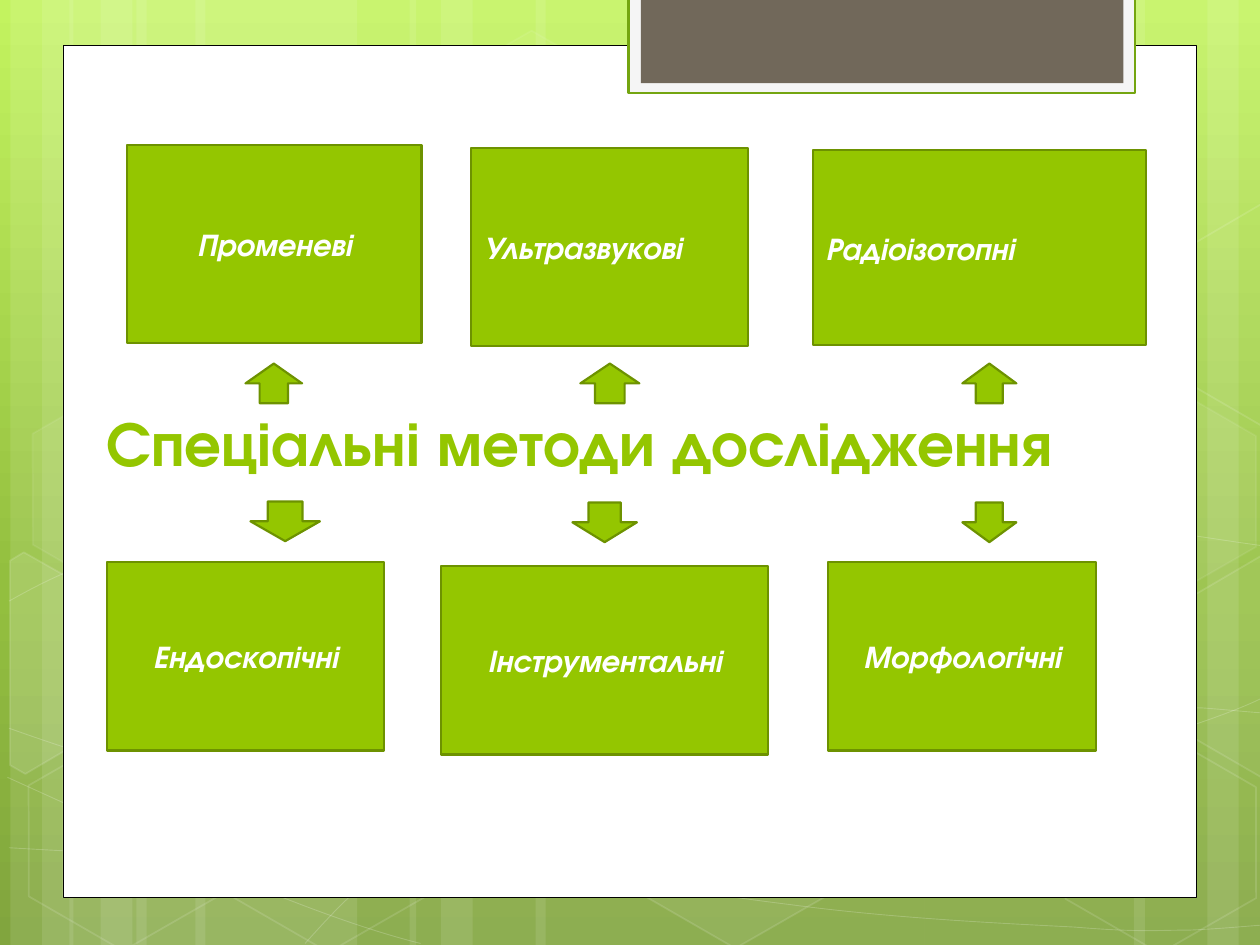
import copy
import math
from lxml import etree
from pptx import Presentation
from pptx import util as u
from pptx.dml import color
from pptx.enum import shapes, text
from pptx.oxml import ns

HUES = {
    "top": "C3F35F", "mid": "93BF3F", "low": "81A53E", "white": "FFFFFF",
    "black": "000000", "pale": "F5F5F5", "rim": "74A510", "brown": "71685A",
    "lime": "94C600", "edge": "6D9200",
}
FONT = "TeX Gyre Adventor"
KIND = shapes.MSO_SHAPE
LEFT, MID = text.PP_ALIGN.LEFT, text.PP_ALIGN.CENTER
TILT = 30

STRIPS = [
    (2.75, 4.45), (0.21, 1.27), (0.85, 2.11), (3.94, 4.45), (1.4, 1.27),
    (2.03, 2.11), (18.63, 4.45), (24.34, 1.27), (22.86, 2.11),
    (10.8, 7.83), (8.26, 1.27), (8.89, 2.11),
]
WAVES = [
    [(0.18, 17.09), (1.55, 17.17), (2.92, 17.25), (4.83, 17.22),
     (6.73, 17.2), (9.09, 17.15), (11.63, 16.89),
     (14.17, 16.64), (17.78, 16.15), (20.12, 15.67),
     (22.43, 15.19), (24.82, 14.43), (25.58, 14)],
    [(0.18, 12.12), (0.91, 11.71), (1.65, 11.33), (3.07, 10.95),
     (4.52, 10.57), (6.58, 10.01), (8.81, 9.83),
     (11.07, 9.65), (13.82, 9.63), (16.61, 9.83),
     (19.41, 10.03), (24.05, 10.82), (25.58, 11.02)],
    [(0.15, 15.67), (3.23, 17.07), (6.27, 18.47), (8.48, 19.02)],
    [(0.18, 14.68), (0.97, 14.96), (1.78, 15.24), (3.25, 15.65),
     (4.75, 16.03), (6.93, 16.66), (9.07, 17.09),
     (11.18, 17.53), (13.84, 17.98), (15.95, 18.24),
     (18.06, 18.52), (20.32, 18.62), (21.67, 18.69),
     (22.99, 18.8), (23.34, 18.75), (24, 18.75),
     (24.66, 18.72), (25.12, 18.67), (25.58, 18.64)],
    [(6.15, 19.02), (6.6, 18.52), (7.06, 18.01), (7.67, 17.55),
     (8.28, 17.09), (9.14, 16.59), (9.86, 16.23),
     (10.57, 15.88), (11, 15.72), (11.94, 15.47),
     (12.85, 15.21), (14.55, 14.86), (15.44, 14.68),
     (16.36, 14.5), (16.48, 14.5), (17.27, 14.45),
     (18.06, 14.38), (19.3, 14.3), (20.17, 14.27),
     (21.06, 14.25), (22.5, 14.27), (24.21, 14.27),
     (24.66, 14.3), (25.1, 14.35), (25.55, 14.38)],
]
HEXES = [
    (8.48, 0.91, 4, 8), (12.62, 14.96, 6, 12), (0.28, 15.01, 0, 12),
    (0.36, 7.92, 7, 8), (4.42, 15.04, 0, 12), (19.13, 11.51, 10, 12),
    (21.18, 15.06, 0, 12), (21.18, 7.98, 7, 8),
]
WEST = [(0.2, 11.3), (0.48, 11.13), (2.44, 12.24),
        (2.41, 14.48), (0.51, 15.6), (0.2, 15.42)]
EAST = [(23.52, 12.32), (25.43, 11.2), (25.63, 11.33),
        (25.63, 15.57), (25.45, 15.67), (23.52, 14.55)]
UPPER = [
    ("Променеві", MID, (0.41, 0, 5.94, 3.99), (2.8, 4.41, 1.14)),
    ("Ультразвукові", LEFT, (7.34, 0.06, 5.59, 3.99), (9.55, 4.41, 1.19)),
    ("Радіоізотопні", LEFT, (14.24, 0.1, 6.71, 3.94), (17.25, 4.41, 1.09)),
]
LOWER = [
    ("Ендоскопічні", MID, (0, 1.22, 5.6, 3.8), (2.9, 0, 1.4)),
    ("Інструментальні", MID, (6.74, 1.3, 6.6, 3.8), (9.39, 0.02, 1.3)),
    ("Морфологічні", MID, (14.54, 1.22, 5.41, 3.8), (17.25, 0.02, 1.09)),
]


def tint(name):
    return color.RGBColor.from_string(HUES[name])


def fade(shape, where, part):
    for node in shape._element.spPr.xpath(where + "/a:srgbClr"):
        etree.SubElement(node, ns.qn("a:alpha"), val=str(part * 1000))


def paint(shape, fill=None, line=None, width=1, fog=100, haze=100):
    shape.shadow.inherit = False
    if fill and fog:
        shape.fill.solid()
        shape.fill.fore_color.rgb = tint(fill)
    else:
        shape.fill.background()
    if line:
        shape.line.color.rgb = tint(line)
        shape.line.width = u.Pt(width)
    else:
        shape.line.fill.background()
    if fog < 100:
        fade(shape, "./a:solidFill", fog)
    if haze < 100:
        fade(shape, "./a:ln/a:solidFill", haze)


def place(slide, kind, box, **look):
    shape = slide.shapes.add_shape(kind, *map(u.Cm, box))
    paint(shape, **look)
    return shape


def trace(slide, dots, close, **look):
    pts = [(u.Cm(x), u.Cm(y)) for x, y in dots]
    pen = slide.shapes.build_freeform(*pts[0])
    pen.add_line_segments(pts[1:], close=close)
    shape = pen.convert_to_shape()
    paint(shape, line="white", **look)
    return shape


def bend(shape):
    legs = shape._element.xpath(".//a:lnTo")
    for i in range(0, len(legs), 3):
        curve = etree.Element(ns.qn("a:cubicBezTo"))
        legs[i].addprevious(curve)
        for leg in legs[i:i + 3]:
            curve.append(leg[0])
            leg.getparent().remove(leg)


def turn(dots, hub):
    a = math.radians(-TILT)
    return [(hub[0] + (x - hub[0]) * math.cos(a) - (y - hub[1]) * math.sin(a),
             hub[1] + (x - hub[0]) * math.sin(a) + (y - hub[1]) * math.cos(a))
            for x, y in dots]


def shift(dots, x, y):
    return [(a + x, b + y) for a, b in dots]


def write(shape, words, size, hue, align, anchor, slant=False):
    frame = shape.text_frame
    frame.word_wrap = True
    frame.vertical_anchor = anchor
    para = frame.paragraphs[0]
    para.alignment = align
    run = para.add_run()
    run.text = words
    font = run.font
    font.name, font.size, font.bold = FONT, u.Pt(size), True
    if slant:
        font.italic = True
    font.color.rgb = tint(hue)
    return para


def wash(slide):
    fill = slide.background.fill
    fill.gradient()
    fill.gradient_angle = 270
    last = slide._element.xpath(".//a:gs")[-1]
    last.addprevious(copy.deepcopy(last))
    for stop, (at, hue) in zip(fill.gradient_stops,
                               [(0, "top"), (0.62, "mid"), (1, "low")]):
        stop.position = at
        stop.color.rgb = tint(hue)


def decor(slide, box):
    x, y, w, h = box
    for left, wide in STRIPS:
        place(slide, KIND.RECTANGLE, (x + left, y, wide, h), fill="white", fog=10)
    for wave in WAVES:
        bend(trace(slide, shift(wave, x, y), False, width=0.5, haze=20))
    for left, top, fog, haze in HEXES:
        cell = place(slide, KIND.HEXAGON, (x + left, y + top, 4.44, 3.87),
                     fill="white", fog=fog, line="white", haze=haze)
        cell.adjustments[0] = 0.29
        cell.rotation = TILT
    for dots, hub, rise, fog in [(WEST, (0.91, 13.59), 0, 10),
                                 (EAST, (25.02, 13.21), 0, 4),
                                 (EAST, (25.02, 13.21), -7.09, 0)]:
        part = trace(slide, shift(turn(dots, hub), x, y + rise), True,
                     fill="white", fog=fog, haze=12)
        part.rotation = TILT


def panel(slide, box):
    x, y, w, h = box
    place(slide, KIND.RECTANGLE, box, fill="white", line="black", width=0.5)
    place(slide, KIND.RECTANGLE, (x + 11.4, y - 0.96, 10.21, 1.93),
          fill="pale", line="rim", width=1.25)
    place(slide, KIND.RECTANGLE, (x + 11.65, y - 0.96, 9.73, 1.73), fill="brown")


def title(slide, box):
    shape = slide.shapes.add_textbox(*map(u.Cm, box))
    para = write(shape, "Спеціальні методи дослідження", 36, "lime", LEFT,
                 text.MSO_ANCHOR.BOTTOM)
    para.add_line_break()
    style = para.runs[0]._r.rPr
    para._p[-1].append(copy.deepcopy(style))
    tail = copy.deepcopy(style)
    tail.tag = ns.qn("a:endParaRPr")
    para._p.append(tail)


def row(slide, box, items, kind):
    x, y = box[:2]
    look = {"fill": "lime", "line": "edge", "width": 1.25}
    for words, align, (cx, cy, cw, ch), (ax, ay, aw) in items:
        card = place(slide, KIND.RECTANGLE, (x + cx, y + cy, cw, ch), **look)
        write(card, words, 18, "white", align, text.MSO_ANCHOR.MIDDLE, True)
        place(slide, kind, (x + ax, y + ay, aw, 0.8), **look)


def main():
    deck = Presentation()
    deck.slide_width, deck.slide_height = u.Cm(25.4), u.Cm(19.05)
    slide = deck.slides.add_slide(deck.slide_layouts[6])
    wash(slide)
    decor(slide, (0, 0, 25.4, 19.05))
    panel(slide, (1.27, 0.91, 22.86, 17.19))
    title(slide, (1.9, 9.04, 22.4, 2.26))
    row(slide, (2.15, 2.92, 20.96, 5.19), UPPER, KIND.UP_ARROW)
    row(slide, (2.15, 10.11, 19.94, 5.1), LOWER, KIND.DOWN_ARROW)
    deck.save("out.pptx")


if __name__ == "__main__":
    main()
